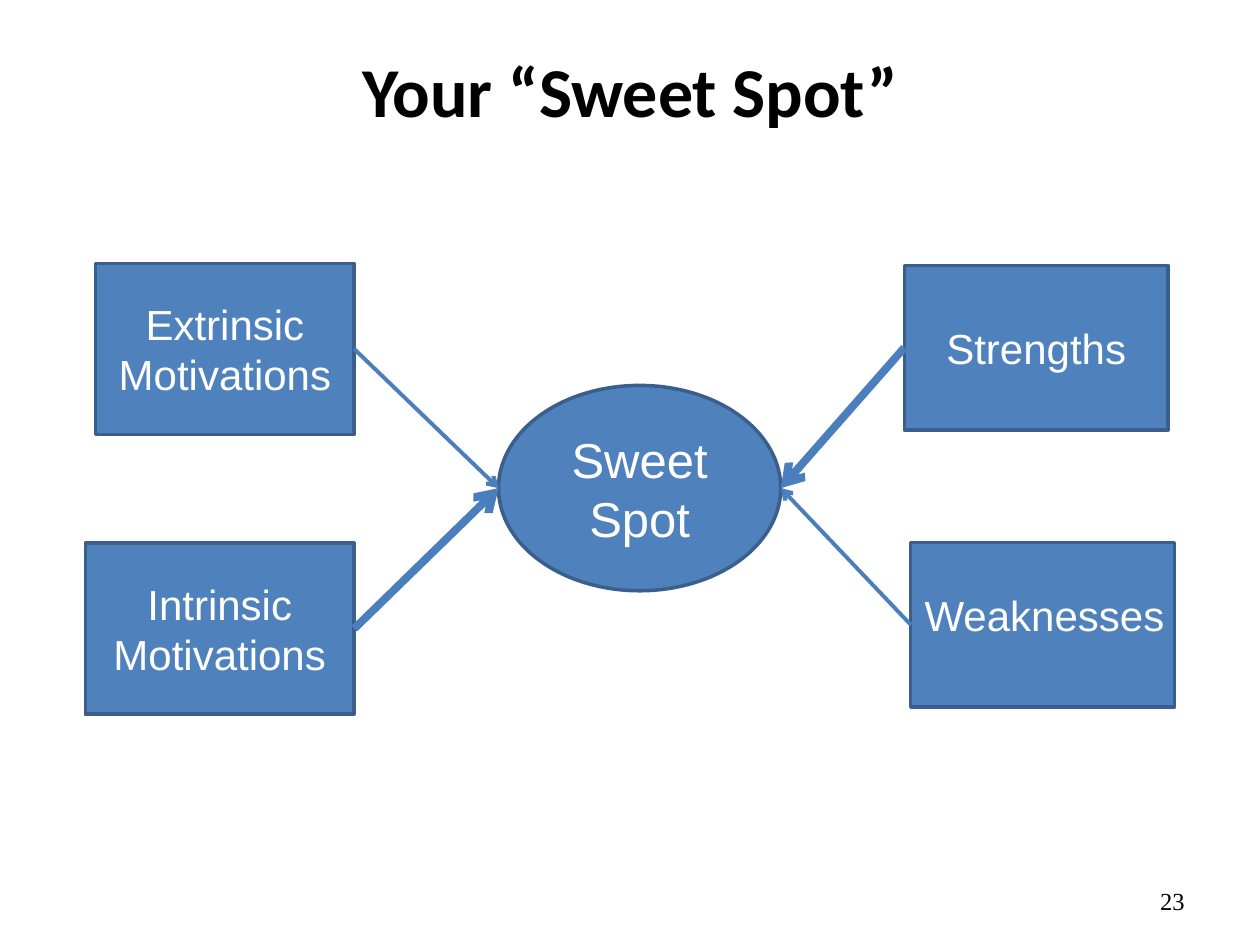
from lxml import etree
from pptx import Presentation
from pptx.dml.color import RGBColor
from pptx.enum.shapes import MSO_CONNECTOR, MSO_SHAPE
from pptx.enum.text import MSO_ANCHOR, PP_ALIGN
from pptx.oxml.ns import qn
from pptx.util import Cm, Pt

RECTANGLE = MSO_SHAPE.RECTANGLE
OVAL = MSO_SHAPE.OVAL
STRAIGHT = MSO_CONNECTOR.STRAIGHT
MIDDLE = MSO_ANCHOR.MIDDLE
TOP = MSO_ANCHOR.TOP
CENTER = PP_ALIGN.CENTER
RIGHT = PP_ALIGN.RIGHT

BLACK = RGBColor(0x00, 0x00, 0x00)
WHITE = RGBColor(0xFF, 0xFF, 0xFF)
BLUE = RGBColor(0x4F, 0x81, 0xBD)
OUTLINE = RGBColor(0x3A, 0x5F, 0x8C)
ARROW = RGBColor(0x4B, 0x7E, 0xBC)

LEFT_SIDE, RIGHT_SIDE = 1, 3
THIN, THICK = 2.25, 4.5


class SlideBuilder:
    title_font = {"name": "Calibri", "size": Pt(40), "bold": True}
    box_font = {"name": "Arial", "size": Pt(24)}
    center_font = {"name": "Arial", "size": Pt(28)}
    number_font = {"name": "Times New Roman", "size": Pt(14)}

    def __init__(self, presentation):
        self.slide = presentation.slides.add_slide(presentation.slide_layouts[5])

    def fill_text(self, shape, lines, font, color, alignment=CENTER, anchor=MIDDLE):
        frame = shape.text_frame
        frame.word_wrap = True
        frame.vertical_anchor = anchor
        frame.text = "\n".join(lines)
        for paragraph in frame.paragraphs:
            paragraph.alignment = alignment
            for run in paragraph.runs:
                for attribute, value in font.items():
                    setattr(run.font, attribute, value)
                run.font.color.rgb = color

    def title(self, text, left, top, width, height):
        title = self.slide.shapes.title
        position = {"left": left, "top": top, "width": width, "height": height}
        for attribute, value in position.items():
            setattr(title, attribute, Cm(value))
        self.fill_text(title, [text], self.title_font, BLACK)

    def node(self, kind, lines, font, *bounds):
        shape = self.slide.shapes.add_shape(kind, *map(Cm, bounds))
        shape.shadow.inherit = False
        shape.fill.solid()
        shape.fill.fore_color.rgb = BLUE
        shape.line.color.rgb = OUTLINE
        shape.line.width = Pt(2)
        if lines:
            self.fill_text(shape, lines, font, WHITE)
        return shape

    def text(self, text, font, color, alignment, anchor, *bounds):
        box = self.slide.shapes.add_textbox(*map(Cm, bounds))
        self.fill_text(box, [text], font, color, alignment, anchor)

    def arrow(self, box, side, target, width):
        target_x = target.left if side == RIGHT_SIDE else target.left + target.width
        target_y = target.top + target.height // 2
        connector = self.slide.shapes.add_connector(
            STRAIGHT, box.left, box.top, target_x, target_y
        )
        connector.begin_connect(box, side)
        connector.line.color.rgb = ARROW
        connector.line.width = Pt(width)
        properties = connector._element.spPr
        line = properties.find(qn("a:ln"))
        etree.SubElement(line, qn("a:tailEnd"), type="arrow")
        etree.SubElement(properties, qn("a:effectLst"))


def main():
    presentation = Presentation()
    presentation.slide_width = Cm(25.4)
    presentation.slide_height = Cm(19.05)
    builder = SlideBuilder(presentation)
    builder.title("Your “Sweet Spot”", 0, 0.4, 25.4, 2.8)

    font = builder.box_font
    extrinsic = builder.node(
        RECTANGLE, ["Extrinsic", "Motivations"], font, 1.93, 5.31, 5.21, 3.45
    )
    intrinsic = builder.node(
        RECTANGLE, ["Intrinsic", "Motivations"], font, 1.72, 10.95, 5.42, 3.45
    )
    strengths = builder.node(
        RECTANGLE, ["Strengths"], font, 18.23, 5.35, 5.32, 3.32
    )
    weaknesses = builder.node(RECTANGLE, [], font, 18.36, 10.94, 5.32, 3.31)
    sweet_spot = builder.node(
        OVAL, ["Sweet", "Spot"], builder.center_font, 10.05, 7.77, 5.69, 4.14
    )
    builder.text("Weaknesses", font, WHITE, CENTER, TOP, 18.03, 11.76, 6.05, 1.27)

    for box, side, width in (
        (intrinsic, RIGHT_SIDE, THICK),
        (extrinsic, RIGHT_SIDE, THIN),
        (strengths, LEFT_SIDE, THICK),
        (weaknesses, LEFT_SIDE, THIN),
    ):
        builder.arrow(box, side, sweet_spot, width)

    builder.text(
        "23", builder.number_font, BLACK, RIGHT, MIDDLE, 18.21, 17.65, 5.92, 1.02
    )
    presentation.save("out.pptx")


if __name__ == "__main__":
    main()
